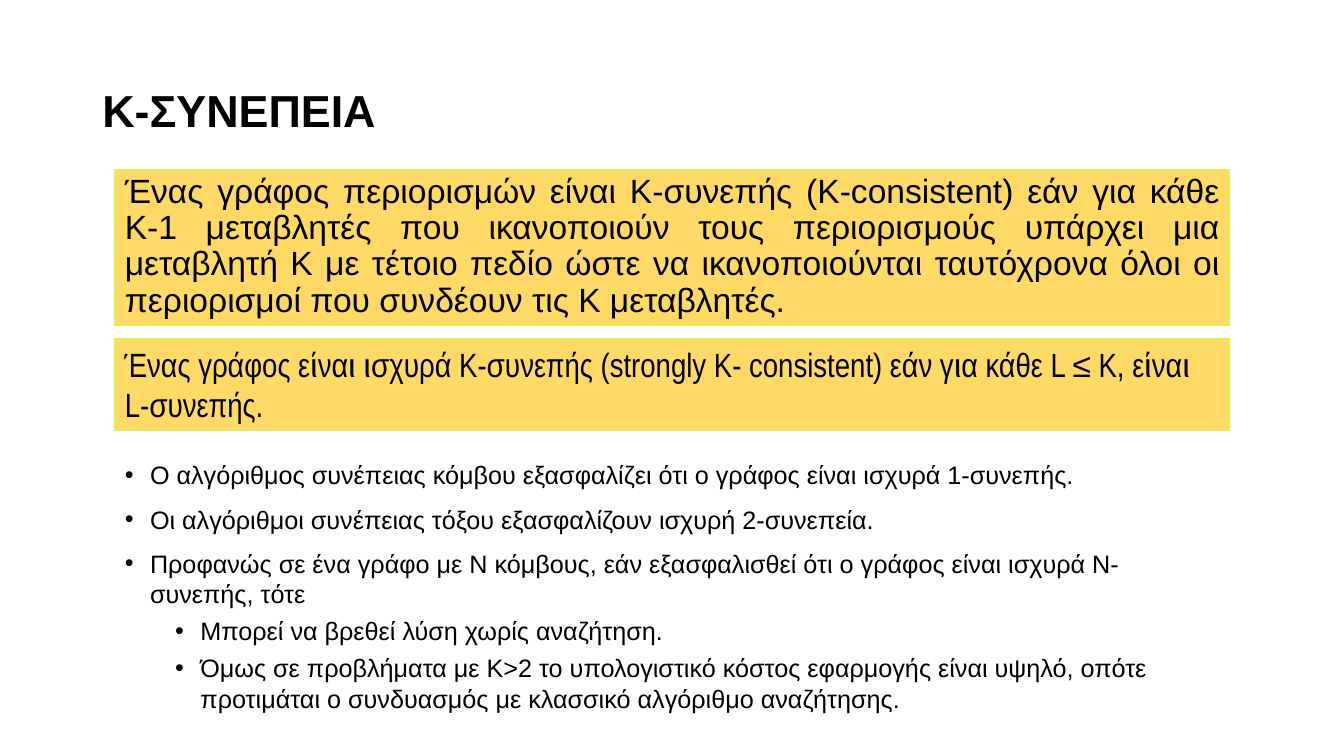
from lxml.etree import SubElement
from pptx import Presentation
from pptx.dml.color import RGBColor
from pptx.enum.shapes import MSO_SHAPE
from pptx.enum.text import MSO_ANCHOR, PP_ALIGN
from pptx.oxml.ns import qn
from pptx.util import Pt

COLOURS = {"text": "000000", "panel": "FFD966", "border": "CCFF33"}

# Shared column of the panels and the bullet list
LEFT, WIDTH = 82.1, 796.3
INDENT = 18

TITLE = "Κ-ΣΥΝΕΠΕΙΑ"
K_CONSISTENCY = (
    "Ένας γράφος περιορισμών είναι Κ-συνεπής (K-consistent) εάν για κάθε Κ-1 "
    "μεταβλητές που ικανοποιούν τους περιορισμούς υπάρχει μια μεταβλητή Κ με "
    "τέτοιο πεδίο ώστε να ικανοποιούνται ταυτόχρονα όλοι οι περιορισμοί που "
    "συνδέουν τις Κ μεταβλητές."
)
STRONG_CONSISTENCY = (
    "Ένας γράφος είναι ισχυρά Κ-συνεπής (strongly K- consistent) εάν για κάθε "
    "L ≤ K, είναι L-συνεπής."
)
# Level and wording of each bullet
REMARKS = [
    (0, "Ο αλγόριθμος συνέπειας κόμβου εξασφαλίζει ότι ο γράφος είναι ισχυρά "
        "1-συνεπής."),
    (0, "Οι αλγόριθμοι συνέπειας τόξου εξασφαλίζουν ισχυρή 2-συνεπεία."),
    (0, "Προφανώς σε ένα γράφο με Ν κόμβους, εάν εξασφαλισθεί ότι ο γράφος "
        "είναι ισχυρά Ν-συνεπής, τότε"),
    (1, "Μπορεί να βρεθεί λύση χωρίς αναζήτηση."),
    (1, "Όμως σε προβλήματα με Κ>2 το υπολογιστικό κόστος εφαρμογής είναι "
        "υψηλό, οπότε προτιμάται ο συνδυασμός με κλασσικό αλγόριθμο αναζήτησης."),
]


def colour(name):
    return RGBColor.from_string(COLOURS[name])


def style_text(para, size, font="Arial", bold=False):
    for span in para.runs:
        span.font.name = font
        span.font.size = Pt(size)
        span.font.bold = bold
        span.font.color.rgb = colour("text")


def add_text_box(page, left, top, width, height, anchor=MSO_ANCHOR.TOP):
    box = page.shapes.add_textbox(Pt(left), Pt(top), Pt(width), Pt(height))
    box.text_frame.word_wrap = True
    box.text_frame.vertical_anchor = anchor
    return box.text_frame


def add_title(page, text):
    frame = add_text_box(page, 66, 28.8, 828, 104.4, MSO_ANCHOR.MIDDLE)
    frame.text = text
    para = frame.paragraphs[0]
    para.line_spacing = 0.9
    style_text(para, 32, bold=True)


def add_panel(page, text, top, height, font, align, line_spacing):
    box = page.shapes.add_shape(
        MSO_SHAPE.RECTANGLE, Pt(LEFT), Pt(top), Pt(WIDTH), Pt(height))
    box.shadow.inherit = False
    box.fill.solid()
    box.fill.fore_color.rgb = colour("panel")
    box.line.color.rgb = colour("border")
    box.line.width = Pt(0.75)

    frame = box.text_frame
    frame.word_wrap = True
    frame.vertical_anchor = MSO_ANCHOR.TOP
    frame.text = text
    para = frame.paragraphs[0]
    para.alignment = align
    para.line_spacing = line_spacing
    style_text(para, 24, font)


def add_bullet(para, level):
    properties = para._p.get_or_add_pPr()
    properties.set("marL", str(Pt(INDENT * (1 + 2 * level))))
    properties.set("indent", str(-Pt(INDENT)))
    SubElement(properties, qn("a:buFont")).set("typeface", "Arial")
    SubElement(properties, qn("a:buChar")).set("char", "•")


def add_bullet_list(page, items, top, height):
    frame = add_text_box(page, LEFT, top, WIDTH, height)
    for index, (level, text) in enumerate(items):
        para = frame.add_paragraph() if index else frame.paragraphs[0]
        para.text = text
        para.level = level
        add_bullet(para, level)
        if index:
            para.space_before = Pt(5 if level else 10)
        style_text(para, 18)


def main():
    deck = Presentation()
    deck.slide_width, deck.slide_height = Pt(960), Pt(540)
    page = deck.slides.add_slide(deck.slide_layouts[6])

    add_title(page, TITLE)
    add_bullet_list(page, REMARKS, 324.7, 174.2)

    # Definitions
    add_panel(page, STRONG_CONSISTENCY, 241.9, 65.5, "Arial Narrow",
              PP_ALIGN.LEFT, 1.0)
    add_panel(page, K_CONSISTENCY, 121, 111.6, "Arial", PP_ALIGN.JUSTIFY, 0.9)

    deck.save("out.pptx")


if __name__ == "__main__":
    main()
